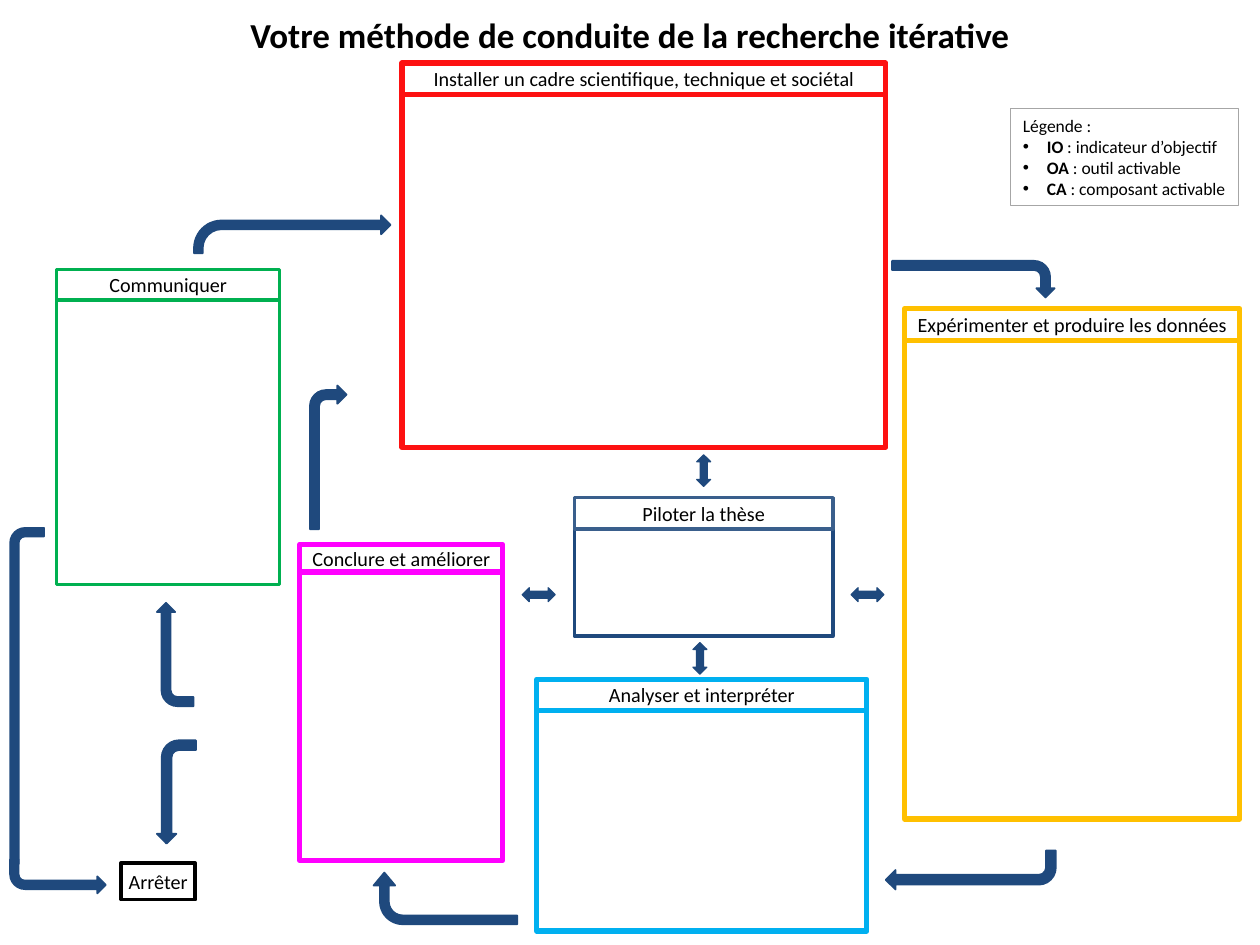
from dataclasses import dataclass

from lxml import etree
from pptx import Presentation
from pptx.dml.color import RGBColor
from pptx.enum.shapes import MSO_SHAPE
from pptx.enum.text import MSO_ANCHOR, PP_ALIGN
from pptx.oxml.ns import qn
from pptx.util import Pt

PX = 9144
RECTANGLE = MSO_SHAPE.RECTANGLE
BENT_ARROW = MSO_SHAPE.BENT_ARROW
DOUBLE_ARROW = MSO_SHAPE.UP_DOWN_ARROW
CENTER, LEFT = PP_ALIGN.CENTER, PP_ALIGN.LEFT
MIDDLE, TOP = MSO_ANCHOR.MIDDLE, MSO_ANCHOR.TOP


@dataclass(frozen=True)
class Theme:
    """Colours, font and type sizes of the slide."""
    font: str = "Calibri"
    title_size: float = 20
    label_size: float = 11.5
    legend_size: float = 10
    ink: str = "000000"
    arrow: str = "1F497D"
    pilot_header: str = "3A5F8C"
    frame: str = "FD1111"
    experiment: str = "FFC000"
    analyse: str = "00B0F0"
    conclude: str = "FF00FF"
    communicate: str = "00B050"
    legend: str = "A6A6A6"


THEME = Theme()

# Box, header height, label, body colour, header colour, line width
STAGES = [
    ((238, 432, 161, 251), 22, "Conclure et améliorer", THEME.conclude, THEME.conclude, 3),
    ((45, 214, 177, 250), 24, "Communiquer", THEME.communicate, THEME.communicate, 2),
    ((426, 539, 262, 200), 25, "Analyser et interpréter", THEME.analyse, THEME.analyse, 3),
    ((718, 245, 266, 405), 25, "Expérimenter et produire les données",
     THEME.experiment, THEME.experiment, 3),
    ((319, 50, 384, 305), 25, "Installer un cadre scientifique, technique et sociétal",
     THEME.frame, THEME.frame, 3),
    ((456, 395, 205, 110), 25, "Piloter la thèse", THEME.arrow, THEME.pilot_header, 2),
]

# Box, rotation, flips, adjustments
DEFAULT_BEND = (0.25, 0.25, 0.25, 0.44)
BENDS = [
    ((246, 306, 29, 114), 0, "", DEFAULT_BEND),
    ((98, 505, 82, 29), 90, "HV", DEFAULT_BEND),
    ((703, 675, 135, 31), 0, "HV", DEFAULT_BEND),
    ((758, 157, 29, 129), 90, "", DEFAULT_BEND),
    ((333, 656, 41, 114), 270, "", (0.17, 0.21, 0.25, 0.44)),
    ((99, 613, 82, 31), 90, "V", DEFAULT_BEND),
    ((154, 171, 156, 30), 180, "HV", (0.23, 0.25, 0.25, 0.73)),
    ((-115, 542, 273, 27), 90, "V", (0.25, 0.13, 0.25, 0.44)),
    ((8, 682, 76, 27), 180, "H", DEFAULT_BEND),
]

# Box, rotation
EXCHANGES = [
    ((422, 459, 11, 26), 90),
    ((553, 361, 11, 25), 0),
    ((550, 510, 11, 25), 0),
    ((683, 459, 11, 26), 90),
]

LEGEND = [
    ("IO", " : indicateur d’objectif"),
    ("OA", " : outil activable"),
    ("CA", " : composant activable"),
]


def emu(box):
    """Turn a box in px into EMU."""
    return [length * PX for length in box]


def style(paragraph, size, align=LEFT):
    """Set the alignment and font of a paragraph."""
    paragraph.alignment = align
    paragraph.font.name = THEME.font
    paragraph.font.size = Pt(size)
    paragraph.font.color.rgb = RGBColor.from_string(THEME.ink)


def add_outline(slide, kind, box, color, width):
    """Add an unfilled preset shape with a coloured line."""
    shape = slide.shapes.add_shape(kind, *emu(box))
    shape.shadow.inherit = False
    shape.fill.background()
    shape.line.color.rgb = RGBColor.from_string(color)
    shape.line.width = Pt(width)
    return shape


def add_label_box(slide, box, label, color, width):
    """Add an outlined box with a centred label."""
    frame = add_outline(slide, RECTANGLE, box, color, width).text_frame
    frame.margin_left = frame.margin_right = frame.margin_top = frame.margin_bottom = 0
    frame.vertical_anchor = MIDDLE
    frame.word_wrap = False
    frame.text = label
    style(frame.paragraphs[0], THEME.label_size, CENTER)


def add_stage(slide, box, header_height, label, body_color, header_color, width):
    """Add a stage: an empty body under a labelled header."""
    left, top, breadth, height = box
    body = (left, top + header_height, breadth, height - header_height)
    add_outline(slide, RECTANGLE, body, body_color, width)
    add_label_box(slide, (left, top, breadth, header_height), label, header_color, width)


def add_arrow(slide, kind, box, rotation, width):
    """Add a filled block arrow."""
    arrow = add_outline(slide, kind, box, THEME.arrow, width)
    arrow.fill.solid()
    arrow.fill.fore_color.rgb = RGBColor.from_string(THEME.arrow)
    arrow.rotation = rotation
    return arrow


def add_bend(slide, box, rotation, flips, adjustments):
    """Add a bent arrow, mirrored along the given axes."""
    arrow = add_arrow(slide, BENT_ARROW, box, rotation, 1)
    for index, value in enumerate(adjustments):
        arrow.adjustments[index] = value
    for axis in flips:
        arrow._element.spPr.xfrm.set(f"flip{axis}", "1")


def add_legend(slide, box):
    """Add the legend with its bulleted abbreviations."""
    frame = add_outline(slide, RECTANGLE, box, THEME.legend, 0.75).text_frame
    frame.word_wrap = True
    frame.vertical_anchor = TOP
    frame.text = "Légende :"
    style(frame.paragraphs[0], THEME.legend_size)
    for abbreviation, meaning in LEGEND:
        entry = frame.add_paragraph()
        properties = entry._p.get_or_add_pPr()
        properties.set("marL", str(19 * PX))
        properties.set("indent", str(-19 * PX))
        etree.SubElement(properties, qn("a:buFont"), typeface="Arial")
        etree.SubElement(properties, qn("a:buChar"), char="•")
        style(entry, THEME.legend_size)
        term = entry.add_run()
        term.text = abbreviation
        term.font.bold = True
        entry.add_run().text = meaning


def set_title(slide, box):
    """Place and format the title."""
    title = slide.shapes.title
    title.left, title.top, title.width, title.height = emu(box)
    title.text_frame.text = "Votre méthode de conduite de la recherche itérative"
    title.text_frame.vertical_anchor = MIDDLE
    heading = title.text_frame.paragraphs[0]
    style(heading, THEME.title_size, CENTER)
    heading.font.bold = True


def main():
    """Build the slide and save it."""
    deck = Presentation()
    deck.slide_width, deck.slide_height = emu((1000, 750))
    slide = deck.slides.add_slide(deck.slide_layouts[5])
    set_title(slide, (75, -11, 850, 76))
    for stage in STAGES:
        add_stage(slide, *stage)
    for bend in BENDS:
        add_bend(slide, *bend)
    for box, rotation in EXCHANGES:
        add_arrow(slide, DOUBLE_ARROW, box, rotation, 0)
    add_label_box(slide, (96, 685, 59, 29), "Arrêter", THEME.ink, 2)
    add_legend(slide, (802, 86, 181, 77))
    deck.save("out.pptx")


if __name__ == "__main__":
    main()
